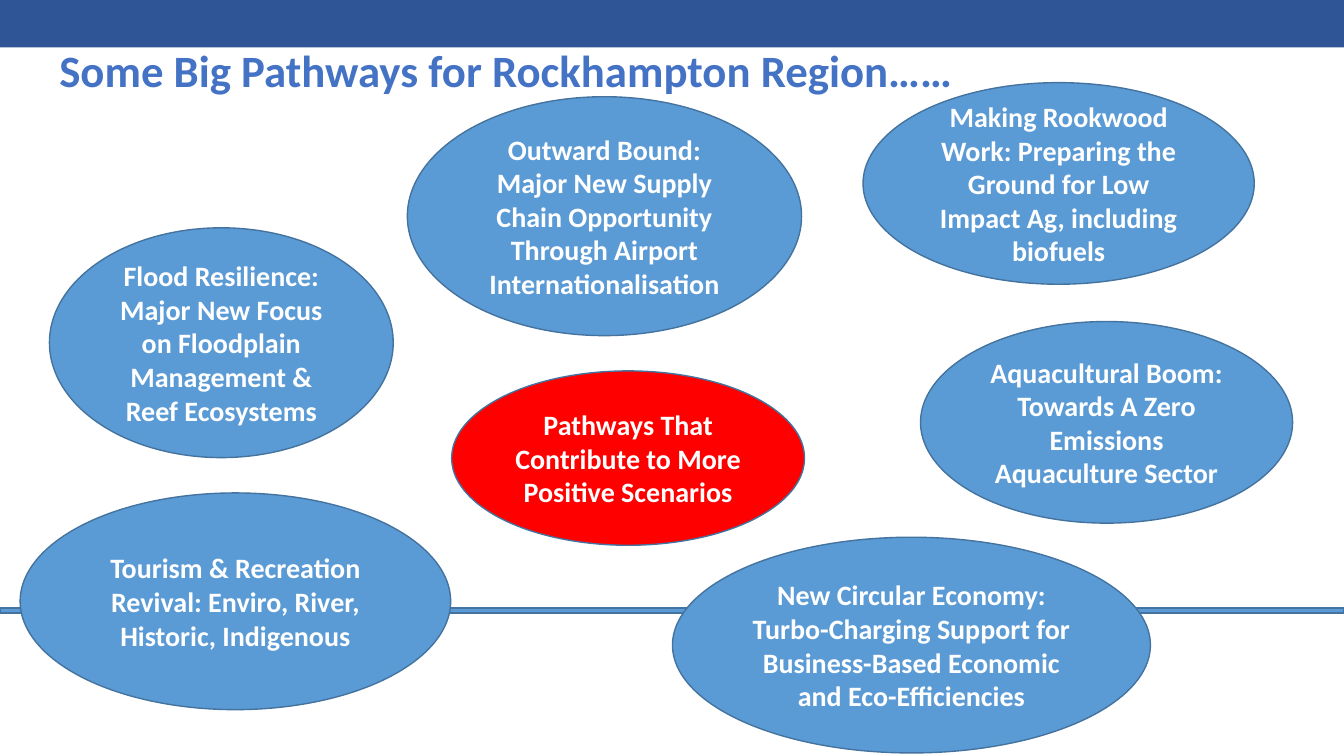
"""Build the slide of big pathways for the Rockhampton region."""
from pptx import Presentation
from pptx.dml.color import RGBColor
from pptx.enum.shapes import MSO_SHAPE
from pptx.enum.text import MSO_ANCHOR, PP_ALIGN
from pptx.util import Inches, Pt

THEME = {
    "band": "2F5597", "title": "4472C4", "pathway": "5B9BD5", "goal": "FF0000",
    "outline": "43739E", "label": "FFFFFF",
    "font": "Calibri", "title_size": 32, "label_size": 20, "outline_width": 1,
}
SLIDE_SIZE = (13.33, 7.5)
TITLE = ("Some Big Pathways for Rockhampton Region……", (0.49, 0.29, 11.23, 0.72))
BANDS = [
    ((0, 0, 13.33, 0.47), "band", None),
    ((0, 6.03, 13.33, 0.05), "pathway", "outline"),
]
BUBBLES = [
    ("Pathways That Contribute to More Positive Scenarios",
     (4.48, 3.68, 3.5, 1.73), "goal"),
    ("Flood Resilience: Major New Focus on Floodplain Management & Reef Ecosystems",
     (0.49, 2.26, 3.41, 2.28), "pathway"),
    ("Outward Bound: Major New Supply Chain Opportunity Through Airport Internationalisation",
     (4.04, 0.96, 3.91, 2.37), "pathway"),
    ("Making Rookwood Work: Preparing the Ground for Low Impact Ag, including biofuels",
     (8.56, 0.82, 3.88, 2), "pathway"),
    ("Aquacultural Boom: Towards A Zero Emissions Aquaculture Sector",
     (9.13, 3.19, 3.69, 2), "pathway"),
    ("Tourism & Recreation Revival: Enviro, River, Historic, Indigenous",
     (0.2, 4.89, 4.27, 2.15), "pathway"),
    ("New Circular Economy: Turbo-Charging Support for Business-Based Economic and Eco-Efficiencies",
     (6.67, 5.33, 4.74, 2.14), "pathway"),
]


def color(role):
    return RGBColor.from_string(THEME[role])


def write(frame, wording, role, paragraph_format):
    frame.word_wrap = True
    paragraph = frame.paragraphs[0]
    for attribute, value in paragraph_format.items():
        setattr(paragraph, attribute, value)
    run = paragraph.add_run()
    run.text = wording
    font_format = {"name": THEME["font"], "size": Pt(THEME[f"{role}_size"]), "bold": True}
    for attribute, value in font_format.items():
        setattr(run.font, attribute, value)
    run.font.color.rgb = color(role)


def add_filled(slide, preset, box, fill, outline):
    shape = slide.shapes.add_shape(preset, *map(Inches, box))
    shape.shadow.inherit = False
    shape.fill.solid()
    shape.fill.fore_color.rgb = color(fill)
    if outline:
        shape.line.color.rgb = color(outline)
        shape.line.width = Pt(THEME["outline_width"])
    else:
        shape.line.fill.background()
    return shape


def main():
    deck = Presentation()
    deck.slide_width, deck.slide_height = map(Inches, SLIDE_SIZE)
    slide = deck.slides.add_slide(deck.slide_layouts[6])

    for box, fill, outline in BANDS:
        add_filled(slide, MSO_SHAPE.RECTANGLE, box, fill, outline)

    wording, box = TITLE
    title = slide.shapes.add_textbox(*map(Inches, box))
    write(title.text_frame, wording, "title", {"line_spacing": 1.15})

    for wording, box, fill in BUBBLES:
        bubble = add_filled(slide, MSO_SHAPE.OVAL, box, fill, "outline")
        bubble.text_frame.vertical_anchor = MSO_ANCHOR.MIDDLE
        write(bubble.text_frame, wording, "label", {"alignment": PP_ALIGN.CENTER})

    deck.save("out.pptx")


if __name__ == "__main__":
    main()
